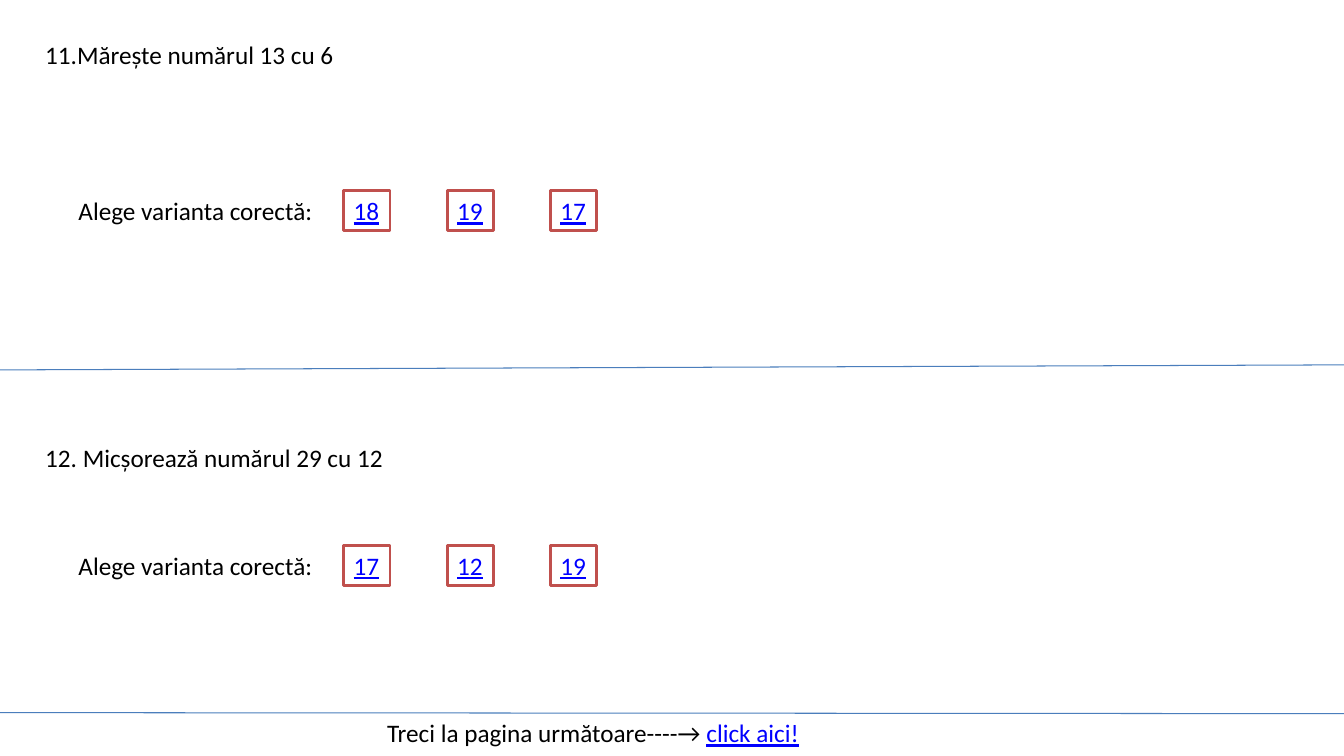
from lxml import etree
from pptx import Presentation
from pptx.dml.color import RGBColor
from pptx.enum.shapes import MSO_CONNECTOR, MSO_SHAPE
from pptx.enum.text import MSO_ANCHOR, MSO_AUTO_SIZE, PP_ALIGN
from pptx.oxml.ns import qn
from pptx.util import Inches, Pt

STRAIGHT = MSO_CONNECTOR.STRAIGHT
RECTANGLE = MSO_SHAPE.RECTANGLE
TOP = MSO_ANCHOR.TOP
LEFT = PP_ALIGN.LEFT
GROW = MSO_AUTO_SIZE.SHAPE_TO_FIT_TEXT

WIDTH, HEIGHT = 13.33, 7.5
BLACK, BLUE, RED, WHITE, RULE = "000000", "0000FF", "C0504D", "FFFFFF", "4B7EBC"
PROMPT = "Alege varianta corectă:"
EXERCISES = [
    {"question": "11.Mărește numărul 13 cu 6", "width": 3.09, "top": 0.34,
     "answers": ["18", "19", "17"], "answer_top": 1.89},
    {"question": "12. Micșorează numărul 29 cu 12", "width": 3.59, "top": 4.34,
     "answers": ["17", "12", "19"], "answer_top": 5.41},
]
FOOTER = [("Treci la pagina următoare----→ ", BLACK), ("click aici!", BLUE)]
DIVIDERS = [(3.67, 3.62), (7.07, 7.08)]
QUESTION_LEFT, PROMPT_LEFT, PROMPT_WIDTH = 0.35, 0.68, 2.55
ANSWER_LEFT, ANSWER_STEP, ANSWER_WIDTH = 3.41, 1.025, 0.46
ROW_HEIGHT = 0.4


def color(value):
    return RGBColor.from_string(value)


def write(sp, runs):
    tf = sp.text_frame
    tf.word_wrap = False
    tf.auto_size = GROW
    tf.vertical_anchor = TOP
    p = tf.paragraphs[0]
    p.alignment = LEFT
    for text, ink in runs:
        r = p.add_run()
        r.text = text
        r.font.name = "Calibri"
        r.font.size = Pt(18)
        r.font.color.rgb = color(ink)
        r.font.underline = ink == BLUE


def add_text(s, left, top, width, runs):
    box = [Inches(v) for v in (left, top, width, ROW_HEIGHT)]
    write(s.shapes.add_textbox(*box), runs)


def add_answer(s, left, top, text):
    box = [Inches(v) for v in (left, top, ANSWER_WIDTH, ROW_HEIGHT)]
    sp = s.shapes.add_shape(RECTANGLE, *box)
    sp.shadow.inherit = False
    sp.fill.solid()
    sp.fill.fore_color.rgb = color(WHITE)
    sp.line.color.rgb = color(RED)
    sp.line.width = Pt(2)
    write(sp, [(text, BLUE)])


def add_divider(s, start, end):
    line = s.shapes.add_connector(
        STRAIGHT, 0, Inches(start), Inches(WIDTH), Inches(end))
    line.line.color.rgb = color(RULE)
    line.line.width = Pt(0.75)
    etree.SubElement(line._element.spPr, qn("a:effectLst"))


def main():
    prs = Presentation()
    prs.slide_width, prs.slide_height = Inches(WIDTH), Inches(HEIGHT)
    s = prs.slides.add_slide(prs.slide_layouts[6])
    for start, end in DIVIDERS:
        add_divider(s, start, end)
    for item in EXERCISES:
        add_text(s, QUESTION_LEFT, item["top"], item["width"],
                 [(item["question"], BLACK)])
        add_text(s, PROMPT_LEFT, item["answer_top"], PROMPT_WIDTH,
                 [(PROMPT, BLACK)])
        for i, answer in enumerate(item["answers"]):
            add_answer(s, ANSWER_LEFT + i * ANSWER_STEP, item["answer_top"], answer)
    add_text(s, 3.74, 7.07, 4.35, FOOTER)
    prs.save("out.pptx")


if __name__ == "__main__":
    main()
